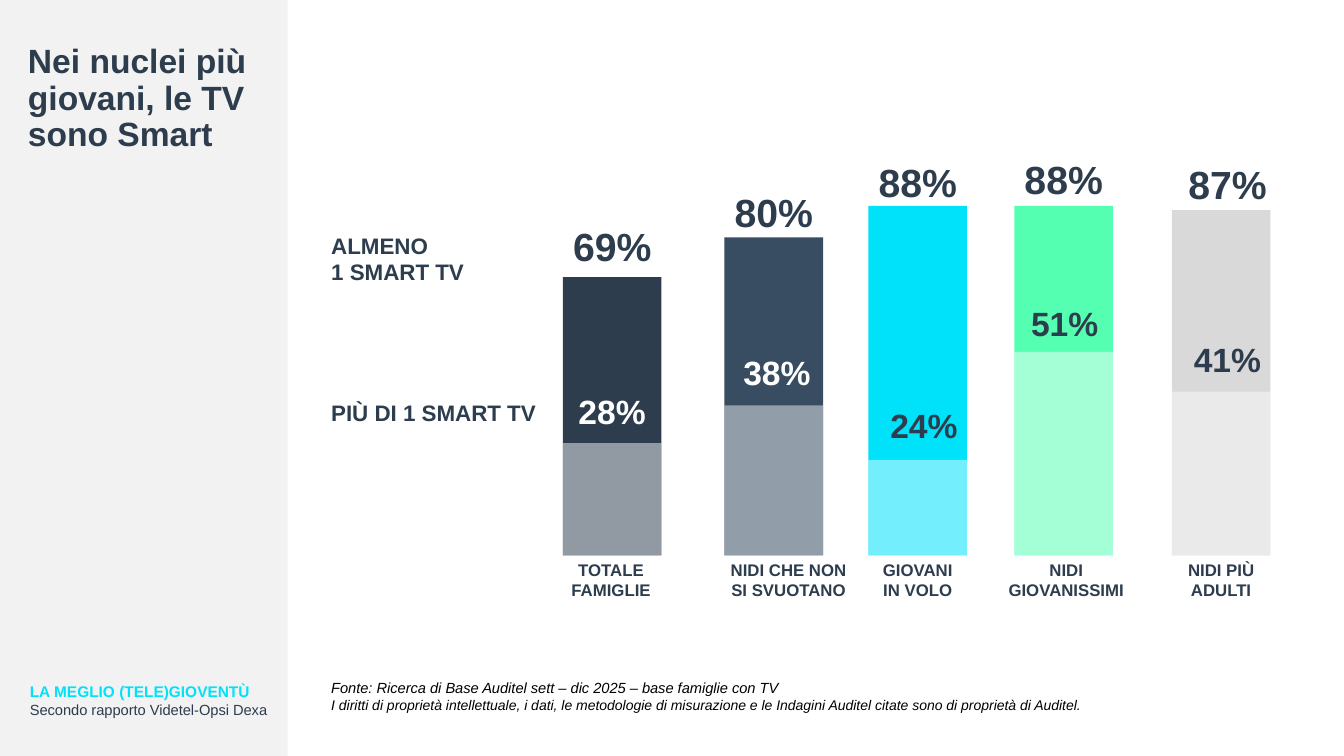
from lxml.etree import SubElement
from pptx import Presentation
from pptx.dml.color import RGBColor
from pptx.enum.shapes import MSO_SHAPE as Shape
from pptx.enum.text import MSO_ANCHOR as Anchor, MSO_AUTO_SIZE as AutoSize, PP_ALIGN as Align
from pptx.oxml.ns import qn
from pptx.util import Pt

EMU_PER_PX = 9525
BAR_WIDTH, BASELINE = 94, 529
INK, NAVY, WHITE, CYAN = "2D3D4D", "2D3D4E", "FFFFFF", "00E1FA"


def px(length):
    return length * EMU_PER_PX


def colour(hex_text):
    return RGBColor.from_string(hex_text)


def write(paragraph, text, size=12, color=INK, bold=False, italic=False, align=Align.LEFT):
    paragraph.alignment = align
    run = paragraph.add_run()
    run.text = text
    font = run.font
    font.name, font.size = "Arial", Pt(size)
    font.bold, font.italic = bold, italic
    font.color.rgb = colour(color)


class SlideBuilder:
    def __init__(self, presentation):
        self.slide = presentation.slides.add_slide(presentation.slide_layouts[5])

    def title(self, text, left, top, width, height):
        heading = self.slide.shapes.title
        heading.left, heading.top = px(left), px(top)
        heading.width, heading.height = px(width), px(height)
        frame = heading.text_frame
        frame.auto_size = AutoSize.NONE
        frame.vertical_anchor = Anchor.TOP
        frame.paragraphs[0].line_spacing = 0.9
        write(frame.paragraphs[0], text, size=24, color=NAVY, bold=True)

    def rectangle(self, left, top, width, height, fill, opacity=100):
        block = self.slide.shapes.add_shape(
            Shape.RECTANGLE, px(left), px(top), px(width), px(height))
        block.shadow.inherit = False
        block.line.fill.background()
        block.fill.solid()
        block.fill.fore_color.rgb = colour(fill)
        if opacity < 100:
            rgb = block.fill._xPr.find(qn("a:solidFill")).find(qn("a:srgbClr"))
            SubElement(rgb, qn("a:alpha")).set("val", str(opacity * 1000))
        return block

    def send_to_back(self, block):
        self.slide.shapes._spTree.insert(2, block._element)

    def text(self, lines, left, top, width, height, tight=False, **style):
        """Each line is a string, or a pair of a string and its own format."""
        frame = self.slide.shapes.add_textbox(
            px(left), px(top), px(width), px(height)).text_frame
        frame.word_wrap = not tight
        if tight:
            frame.auto_size = AutoSize.SHAPE_TO_FIT_TEXT
            frame.margin_left = frame.margin_right = 0
            frame.margin_top = frame.margin_bottom = 0
        for index, line in enumerate(lines):
            words, own = (line, {}) if isinstance(line, str) else line
            paragraph = frame.add_paragraph() if index else frame.paragraphs[0]
            write(paragraph, words, **{**style, **own})


# Bar left, top and fill; top and opacity of the lighter part;
# total and its place; share, its place and colour; category, its left and width
HOUSEHOLDS = [
    ((536, 264, "2D3D4D"), (422, 48), ("69%", 545, 212),
     ("28%", 548, 372, WHITE), ("TOTALE FAMIGLIE", 532, 100)),
    ((690, 226, "384D62"), (386, 45), ("80%", 699, 179),
     ("38%", 705, 335, WHITE), ("NIDI CHE NON SI SVUOTANO", 685, 132)),
    ((827, 196, CYAN), (438, 45), ("88%", 836, 151),
     ("24%", 845, 386, INK), ("GIOVANI IN VOLO", 827, 94)),
    ((966, 196, "55FFB2"), (335, 47), ("88%", 975, 148),
     ("51%", 979, 288, INK), ("NIDI GIOVANISSIMI", 944, 143)),
    ((1116, 200, "D9D9D9"), (373, 45), ("87%", 1131, 153),
     ("41%", 1134, 323, INK), ("NIDI PIÙ ADULTI", 1106, 114)),
]


def main():
    presentation = Presentation()
    presentation.slide_width, presentation.slide_height = px(1280), px(720)
    page = SlideBuilder(presentation)

    # Side panel with title and report name
    page.send_to_back(page.rectangle(0, 0, 274, 720, "F2F2F2"))
    page.title("Nei nuclei più giovani, le TV sono Smart", 17, 38, 250, 322)
    page.text([("LA MEGLIO (TELE)GIOVENTÙ", dict(size=11, color=CYAN, bold=True)),
               "Secondo rapporto Videtel-Opsi Dexa"],
              19, 645, 555, 44, size=10.5, color=NAVY)

    # Source and rights
    page.text(["Fonte: Ricerca di Base Auditel sett – dic 2025 – base famiglie con TV",
               ("I diritti di proprietà intellettuale, i dati, le metodologie di misurazione "
                "e le Indagini Auditel citate sono di proprietà di Auditel.", dict(size=10))],
              306, 642, 758, 60, size=10.5, color="000000", italic=True)

    # Bars with their values and categories
    for bar, lighter, total, share, category in HOUSEHOLDS:
        left, top, fill = bar
        page.rectangle(left, top, BAR_WIDTH, BASELINE - top, fill)
        lighter_top, opacity = lighter
        page.rectangle(left, lighter_top, BAR_WIDTH, BASELINE - lighter_top, WHITE, opacity)
        value, value_left, value_top = total
        page.text([value], value_left, value_top, 76, 45, tight=True,
                  size=28, bold=True, align=Align.CENTER)
        value, value_left, value_top, ink = share
        page.text([value], value_left, value_top, 70, 38, tight=True,
                  size=24, color=ink, bold=True, align=Align.CENTER)
        name, name_left, name_width = category
        page.text([name], name_left, 528, name_width, 48, bold=True, align=Align.CENTER)

    # Row labels
    page.text(["ALMENO", "1 SMART TV"], 306, 216, 243, 61, size=16, bold=True)
    page.text(["PIÙ DI 1 SMART TV"], 306, 375, 243, 36, size=16, bold=True)

    presentation.save("out.pptx")


if __name__ == "__main__":
    main()
